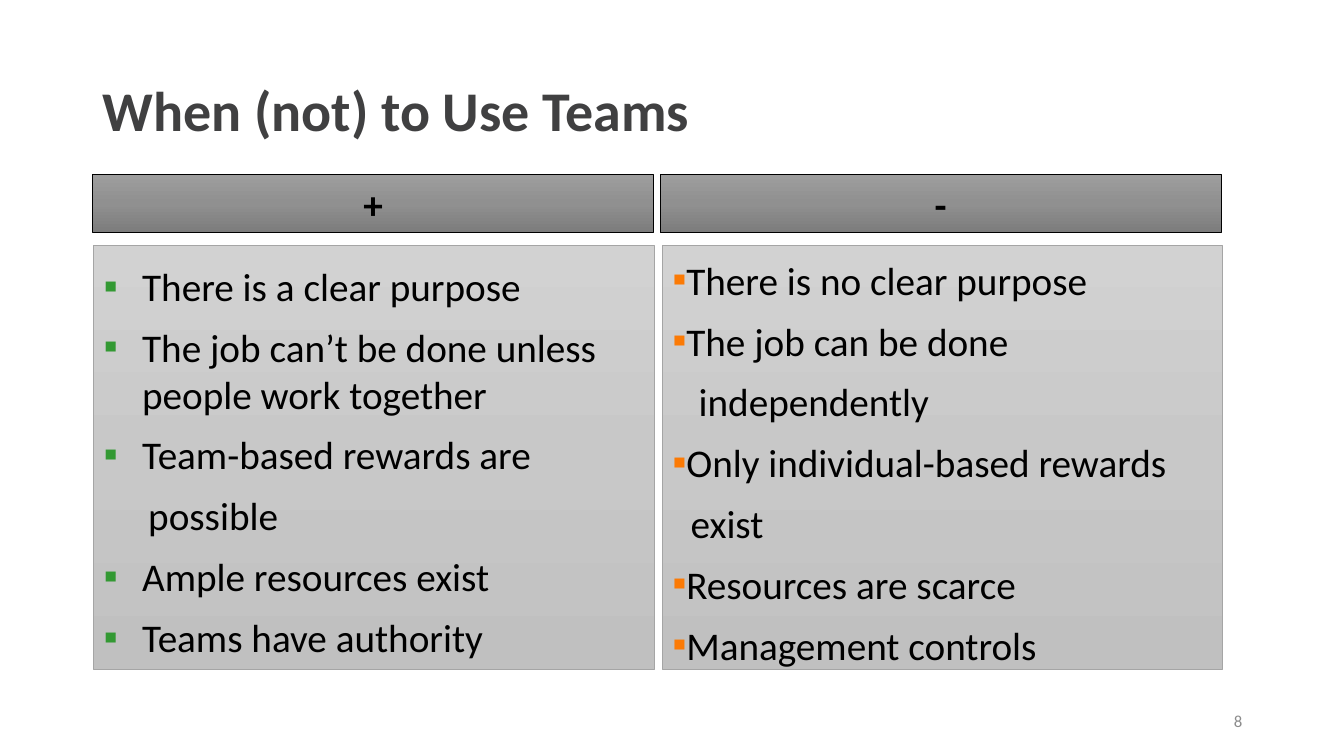
from dataclasses import dataclass

import pptx
import pptx.dml.color
import pptx.enum.text
import pptx.oxml.ns
import pptx.util
from lxml import etree

Inches = pptx.util.Inches
Pt = pptx.util.Pt
Align = pptx.enum.text.PP_ALIGN
Anchor = pptx.enum.text.MSO_ANCHOR
qn = pptx.oxml.ns.qn


@dataclass(frozen=True)
class Theme:
    font: str = "Calibri"
    title_size: float = 40
    text_size: float = 28
    number_size: float = 12
    paragraph_gap: float = 9.8
    line_width: float = 0.5
    title: str = "404041"
    text: str = "000000"
    number: str = "8C8C8C"
    green: str = "339933"
    orange: str = "FB7A05"
    header_line: str = "000000"
    body_line: str = "A5A5A5"
    header_fill: tuple[str, ...] = ("9D9D9D", "909090", "7C7C7C")
    body_fill: tuple[str, ...] = ("D2D2D2", "C8C8C8", "C0C0C0")


@dataclass(frozen=True)
class Box:
    left: float
    top: float
    width: float
    height: float


@dataclass(frozen=True)
class Item:
    text: str
    continued_at: float | None = None  # left margin of an unbulleted line


@dataclass(frozen=True)
class Column:
    sign: str
    header_index: int
    body_index: int
    header: Box
    body: Box
    bullet_color: str
    hanging: float
    top_inset: float
    items: tuple[Item, ...]


THEME = Theme()
HEADER_TOP, HEADER_HEIGHT = 1.73, 0.58
BODY_TOP, BODY_HEIGHT = 2.43, 4.21

COLUMNS = (
    Column("+", 1, 2, Box(0.92, HEADER_TOP, 5.56, HEADER_HEIGHT),
           Box(0.93, BODY_TOP, 5.56, BODY_HEIGHT), THEME.green, 0.38, 0.17, (
               Item("There is a clear purpose"),
               Item("The job can’t be done unless\npeople work together"),
               Item("Team-based rewards are"),
               Item("possible", 0.44),
               Item("Ample resources exist"),
               Item("Teams have authority"))),
    Column("-", 3, 4, Box(6.55, HEADER_TOP, 5.56, HEADER_HEIGHT),
           Box(6.57, BODY_TOP, 5.55, BODY_HEIGHT), THEME.orange, 0, 0.11, (
               Item("There is no clear purpose"),
               Item("The job can be done"),
               Item("independently", 0.26),
               Item("Only individual-based rewards"),
               Item("exist", 0.18),
               Item("Resources are scarce"),
               Item("Management controls"))),
)


def place(shape, box: Box, anchor) -> None:
    shape.left, shape.top = Inches(box.left), Inches(box.top)
    shape.width, shape.height = Inches(box.width), Inches(box.height)
    frame = shape.text_frame
    frame.word_wrap = True
    frame.auto_size = pptx.enum.text.MSO_AUTO_SIZE.NONE
    frame.vertical_anchor = anchor


def paint(shape, colors: tuple[str, ...], line_color: str) -> None:
    """Fill from top to bottom with evenly spaced gradient stops."""
    shape.fill.gradient()
    shape.fill.gradient_angle = 270
    stops = shape._element.find(".//" + qn("a:gsLst"))
    for stop in list(stops):
        stops.remove(stop)
    for index, color in enumerate(colors):
        position = index * 100000 // (len(colors) - 1)
        stop = etree.SubElement(stops, qn("a:gs"), pos=str(position))
        etree.SubElement(stop, qn("a:srgbClr"), val=color)
    shape.line.color.rgb = pptx.dml.color.RGBColor.from_string(line_color)
    shape.line.width = Pt(THEME.line_width)
    shape.shadow.inherit = False


def write(paragraph, text: str, size: float, color: str, bold: bool = False) -> None:
    for index, line in enumerate(text.split("\n")):
        if index:
            paragraph.add_line_break()
        run = paragraph.add_run()
        run.text = line
        run.font.name = THEME.font
        run.font.size = Pt(size)
        run.font.bold = bold
        run.font.color.rgb = pptx.dml.color.RGBColor.from_string(color)


def set_bullet(paragraph, item: Item, column: Column) -> None:
    properties = paragraph._p.get_or_add_pPr()
    if item.continued_at is None:
        margin, indent = column.hanging, -column.hanging
        bullet_color = etree.SubElement(properties, qn("a:buClr"))
        etree.SubElement(bullet_color, qn("a:srgbClr"), val=column.bullet_color)
        etree.SubElement(properties, qn("a:buFont"), typeface=THEME.font)
        etree.SubElement(properties, qn("a:buChar"), char="▪")
    else:
        margin, indent = item.continued_at, 0
        etree.SubElement(properties, qn("a:buNone"))
    properties.set("marL", str(Inches(margin)))
    properties.set("indent", str(Inches(indent)))


def draw_column(slide, column: Column) -> None:
    placeholders = {shape.placeholder_format.idx: shape for shape in slide.placeholders}

    # Heading bar
    header = placeholders[column.header_index]
    place(header, column.header, Anchor.MIDDLE)
    paint(header, THEME.header_fill, THEME.header_line)
    paragraph = header.text_frame.paragraphs[0]
    paragraph.alignment = Align.CENTER
    paragraph.space_before = Pt(0)
    write(paragraph, column.sign, THEME.text_size, THEME.text, bold=True)

    # Bulleted list
    body = placeholders[column.body_index]
    place(body, column.body, Anchor.TOP)
    paint(body, THEME.body_fill, THEME.body_line)
    frame = body.text_frame
    frame.margin_top, frame.margin_bottom = Inches(column.top_inset), Inches(0)
    for index, item in enumerate(column.items):
        paragraph = frame.add_paragraph() if index else frame.paragraphs[0]
        set_bullet(paragraph, item, column)
        paragraph.space_before = Pt(THEME.paragraph_gap if index else 0)
        write(paragraph, item.text, THEME.text_size, THEME.text)


def main() -> None:
    presentation = pptx.Presentation()
    presentation.slide_width = Inches(13.33)
    presentation.slide_height = Inches(7.5)
    comparison_layout = presentation.slide_layouts[4]
    slide = presentation.slides.add_slide(comparison_layout)

    # Title
    title = slide.shapes.title
    place(title, Box(0.92, 0.4, 11.5, 1.45), Anchor.MIDDLE)
    paragraph = title.text_frame.paragraphs[0]
    paragraph.alignment = Align.LEFT
    paragraph.line_spacing = 0.9
    write(paragraph, "When (not) to Use Teams", THEME.title_size, THEME.title, bold=True)

    # The two sides of the comparison
    for column in COLUMNS:
        draw_column(slide, column)

    # Slide number
    number = slide.shapes.add_textbox(0, 0, 0, 0)
    place(number, Box(9.42, 6.95, 3, 0.4), Anchor.MIDDLE)
    paragraph = number.text_frame.paragraphs[0]
    paragraph.alignment = Align.RIGHT
    write(paragraph, "8", THEME.number_size, THEME.number)

    presentation.save("out.pptx")


if __name__ == "__main__":
    main()
